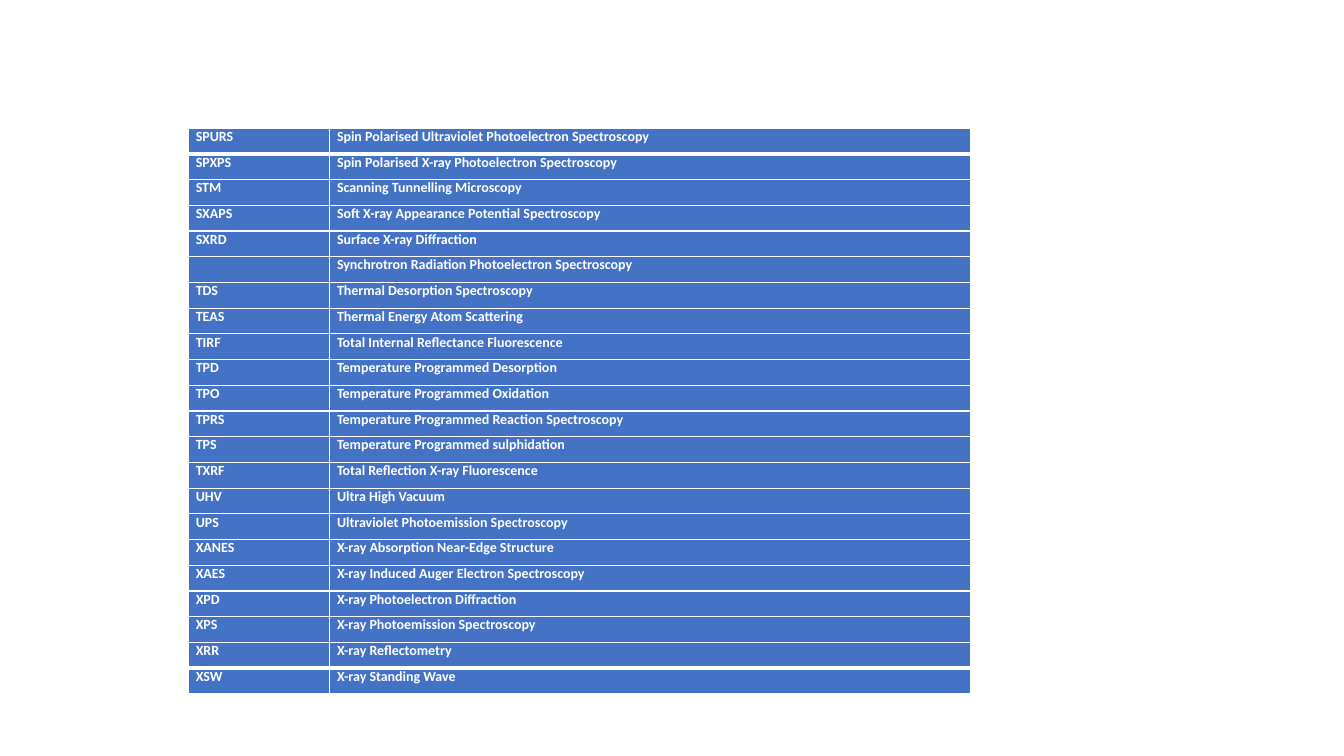
from dataclasses import dataclass

from lxml.etree import SubElement
from pptx import Presentation
from pptx.dml.color import RGBColor
from pptx.enum.text import MSO_ANCHOR, PP_ALIGN
from pptx.oxml.ns import qn
from pptx.util import Emu, Pt

EMU_PER_PX = 4762.5  # 192 px to the inch
WHITE, BLUE = "FFFFFF", "4472C4"
LEFT, TOP = 359, 244
COL_WIDTHS = (269, 1221)
ROW_HEIGHT = 49
SIDE_MARGIN = 14
THIN, THICK = 1, 3
FONT, FONT_SIZE = "Calibri", 10


@dataclass(frozen=True)
class Technique:
    acronym: str
    meaning: str


TECHNIQUES = (
    Technique("SPURS", "Spin Polarised Ultraviolet Photoelectron Spectroscopy"),
    Technique("SPXPS", "Spin Polarised X-ray Photoelectron Spectroscopy"),
    Technique("STM", "Scanning Tunnelling Microscopy"),
    Technique("SXAPS", "Soft X-ray Appearance Potential Spectroscopy"),
    Technique("SXRD", "Surface X-ray Diffraction"),
    Technique("", "Synchrotron Radiation Photoelectron Spectroscopy"),
    Technique("TDS", "Thermal Desorption Spectroscopy"),
    Technique("TEAS", "Thermal Energy Atom Scattering"),
    Technique("TIRF", "Total Internal Reflectance Fluorescence"),
    Technique("TPD", "Temperature Programmed Desorption"),
    Technique("TPO", "Temperature Programmed Oxidation"),
    Technique("TPRS", "Temperature Programmed Reaction Spectroscopy"),
    Technique("TPS", "Temperature Programmed sulphidation"),
    Technique("TXRF", "Total Reflection X-ray Fluorescence"),
    Technique("UHV", "Ultra High Vacuum"),
    Technique("UPS", "Ultraviolet Photoemission Spectroscopy"),
    Technique("XANES", "X-ray Absorption Near-Edge Structure"),
    Technique("XAES", "X-ray Induced Auger Electron Spectroscopy"),
    Technique("XPD", "X-ray Photoelectron Diffraction"),
    Technique("XPS", "X-ray Photoemission Spectroscopy"),
    Technique("XRR", "X-ray Reflectometry"),
    Technique("XSW", "X-ray Standing Wave"),
)


def px(n: int) -> Emu:
    return Emu(round(n * EMU_PER_PX))


def rgb(color: str) -> RGBColor:
    return RGBColor.from_string(color)


def set_borders(cell, top: int, bottom: int) -> None:
    tc_pr = cell._tc.get_or_add_tcPr()
    for side, width in (("L", THIN), ("R", THIN), ("T", top), ("B", bottom)):
        ln = SubElement(tc_pr, qn(f"a:ln{side}"), w=str(Pt(width)))
        fill = SubElement(ln, qn("a:solidFill"))
        SubElement(fill, qn("a:srgbClr"), val=WHITE)


def fill_cell(cell, text: str, top: int, bottom: int) -> None:
    set_borders(cell, top, bottom)
    cell.fill.solid()
    cell.fill.fore_color.rgb = rgb(BLUE)
    cell.margin_left = cell.margin_right = px(SIDE_MARGIN)
    cell.margin_top = cell.margin_bottom = 0
    cell.vertical_anchor = MSO_ANCHOR.TOP
    p = cell.text_frame.paragraphs[0]
    p.alignment = PP_ALIGN.JUSTIFY
    p.font.name, p.font.size, p.font.bold = FONT, Pt(FONT_SIZE), True
    p.font.color.rgb = rgb(WHITE)
    if text:
        p.add_run().text = text
    else:  # keeps the empty cell from stretching its row
        SubElement(p._p, qn("a:endParaRPr"), sz=str(FONT_SIZE * 100))


def add_technique_table(slide, techniques: tuple[Technique, ...]) -> None:
    count = len(techniques)
    table = slide.shapes.add_table(
        count, len(COL_WIDTHS), px(LEFT), px(TOP),
        px(sum(COL_WIDTHS)), px(ROW_HEIGHT * count)).table
    table.first_row = table.horz_banding = False
    for column, width in zip(table.columns, COL_WIDTHS):
        column.width = px(width)

    # Thick rules set off the first and last rows
    thick_rules = (1, count - 1)
    for i, technique in enumerate(techniques):
        table.rows[i].height = px(ROW_HEIGHT)
        top, bottom = (THICK if edge in thick_rules else THIN for edge in (i, i + 1))
        for j, text in enumerate((technique.acronym, technique.meaning)):
            fill_cell(table.cell(i, j), text, top, bottom)


def main() -> None:
    prs = Presentation()
    prs.slide_width, prs.slide_height = px(2560), px(1440)
    slide = prs.slides.add_slide(prs.slide_layouts[6])
    add_technique_table(slide, TECHNIQUES)
    prs.save("out.pptx")


if __name__ == "__main__":
    main()
